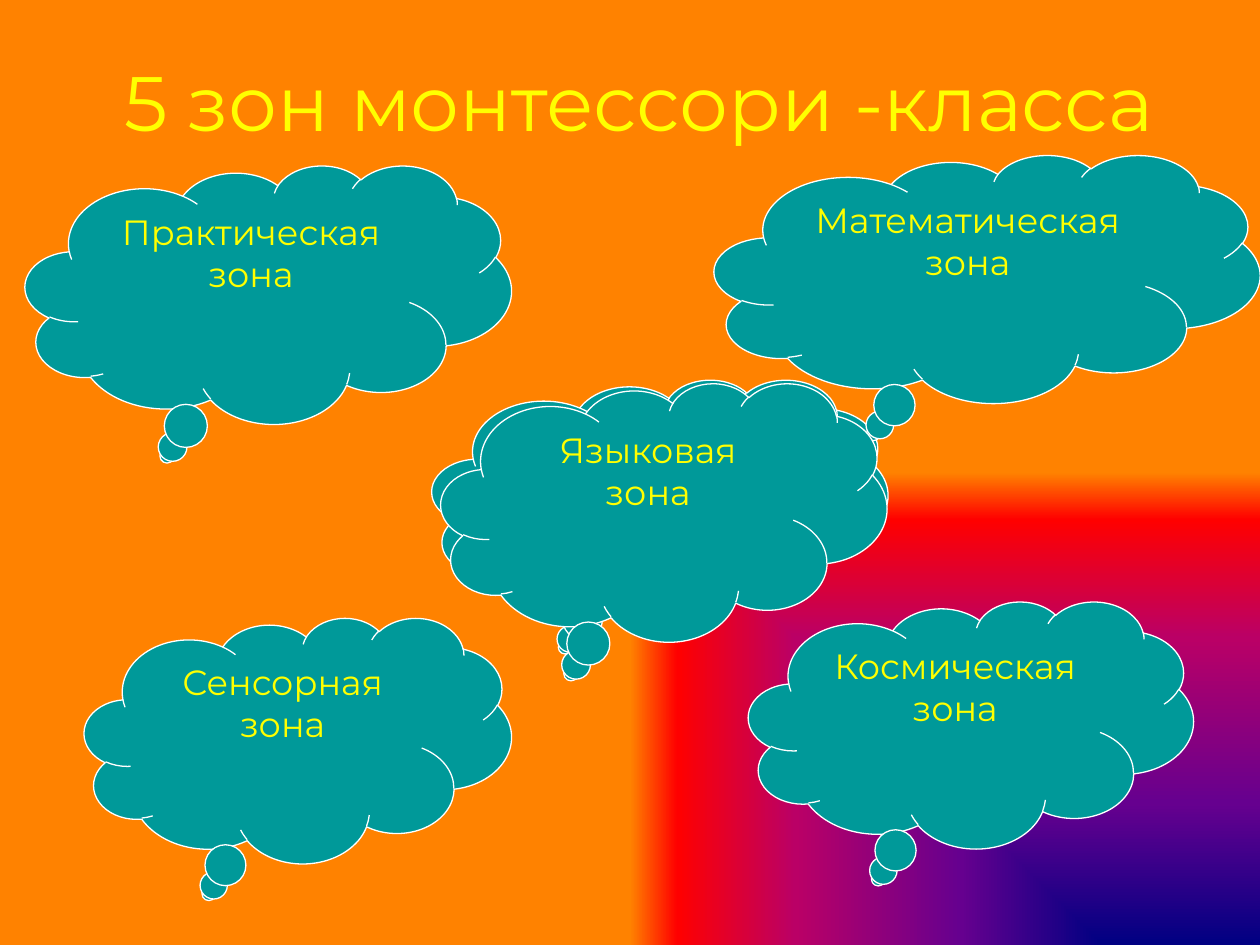
from dataclasses import dataclass

import lxml.etree
import pptx
import pptx.dml.color
import pptx.enum.shapes
import pptx.enum.text
import pptx.oxml.ns
import pptx.util

Cm = pptx.util.Cm
Pt = pptx.util.Pt
RGB = pptx.dml.color.RGBColor
qn = pptx.oxml.ns.qn

TEAL = RGB(0x00, 0x99, 0x99)
WHITE = RGB(0xFF, 0xFF, 0xFF)
YELLOW = RGB(0xFF, 0xFF, 0x00)
STOPS = [
    (0, RGB(0x00, 0x00, 0x82)),
    (30, RGB(0x66, 0x00, 0x8F)),
    (65, RGB(0xBA, 0x00, 0x66)),
    (90, RGB(0xFF, 0x00, 0x00)),
    (100, RGB(0xFF, 0x82, 0x00)),
]
FONT = "Montserrat"


@dataclass
class Cloud:
    left: float
    top: float
    width: float
    height: float
    text: str = ""


CLOUDS = [
    Cloud(8.71, 7.65, 9.19, 4.8),
    Cloud(0.51, 3.33, 9.8, 5.21, "Практическая зона"),
    Cloud(1.7, 12.45, 8.61, 4.95, "Сенсорная зона"),
    Cloud(15.09, 12.12, 8.97, 4.98, "Космическая зона"),
    Cloud(14.4, 3.12, 11, 5, "Математическая зона"),
    Cloud(8.89, 7.72, 8.99, 5.21, "Языковая зона"),
]


def paint(slide: pptx.slide.Slide) -> None:
    """Fill the background with a gradient from the bottom right corner."""
    slide.background.fill.gradient()
    grad = slide.element.find(".//" + qn("a:gradFill"))
    for child in list(grad):
        grad.remove(child)
    group = lxml.etree.SubElement(grad, qn("a:gsLst"))
    for place, color in STOPS:
        stop = lxml.etree.SubElement(group, qn("a:gs"), pos=str(place * 1000))
        lxml.etree.SubElement(stop, qn("a:srgbClr"), val=str(color))
    route = lxml.etree.SubElement(grad, qn("a:path"), path="rect")
    lxml.etree.SubElement(route, qn("a:fillToRect"), l="100000", t="100000")


def write(frame: pptx.text.text.TextFrame, text: str, size: float) -> None:
    """Set centred yellow text."""
    frame.text = text
    frame.word_wrap = True
    line = frame.paragraphs[0]
    line.alignment = pptx.enum.text.PP_ALIGN.CENTER
    font = line.runs[0].font
    font.name = FONT
    font.size = Pt(size)
    font.color.rgb = YELLOW


def draw(slide: pptx.slide.Slide, cloud: Cloud) -> None:
    """Add one thought cloud."""
    shape = slide.shapes.add_shape(
        pptx.enum.shapes.MSO_SHAPE.CLOUD_CALLOUT,
        Cm(cloud.left), Cm(cloud.top), Cm(cloud.width), Cm(cloud.height))
    shape.shadow.inherit = False
    shape.fill.solid()
    shape.fill.fore_color.rgb = TEAL
    shape.line.color.rgb = WHITE
    shape.line.width = Pt(0.75)
    if cloud.text:
        shape.text_frame.vertical_anchor = pptx.enum.text.MSO_ANCHOR.TOP
        write(shape.text_frame, cloud.text, 20)


def main() -> None:
    deck = pptx.Presentation()
    deck.slide_width, deck.slide_height = Cm(25.4), Cm(19.05)
    slide = deck.slides.add_slide(deck.slide_layouts[5])
    paint(slide)

    # Title
    title = slide.shapes.title
    title.left, title.top = Cm(1.45), Cm(0.74)
    title.width, title.height = Cm(22.86), Cm(2.59)
    title.text_frame.auto_size = pptx.enum.text.MSO_AUTO_SIZE.NONE
    title.text_frame.vertical_anchor = pptx.enum.text.MSO_ANCHOR.MIDDLE
    write(title.text_frame, "5 зон монтессори -класса", 44)

    # Zones
    for cloud in CLOUDS:
        draw(slide, cloud)

    deck.save("out.pptx")


if __name__ == "__main__":
    main()
